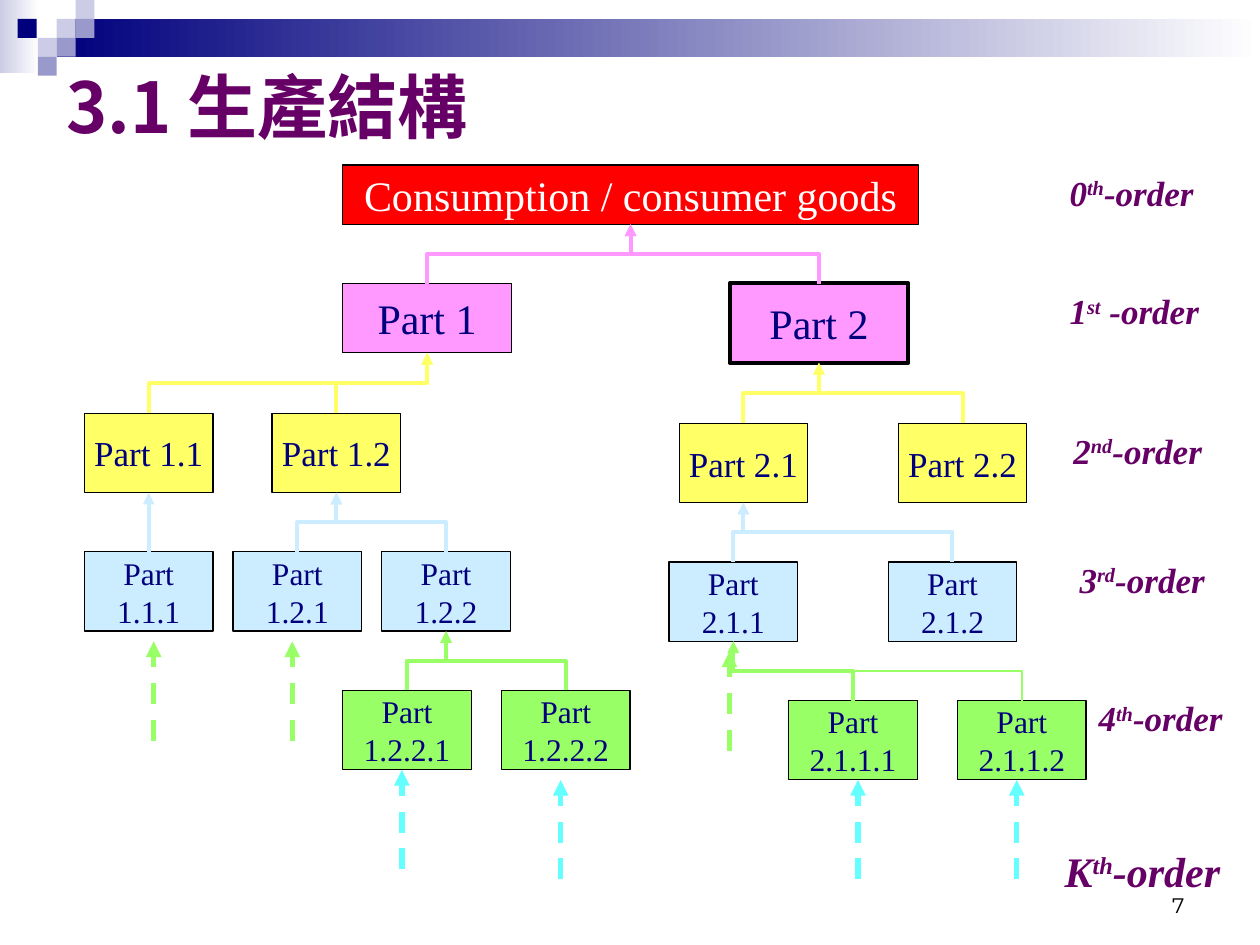
from dataclasses import dataclass

from lxml.etree import SubElement
from pptx import Presentation
from pptx.dml.color import RGBColor
from pptx.enum.dml import MSO_LINE
from pptx.enum.shapes import MSO_CONNECTOR, MSO_SHAPE
from pptx.enum.text import MSO_ANCHOR, MSO_AUTO_SIZE, PP_ALIGN
from pptx.oxml.ns import qn
from pptx.util import Inches, Pt


@dataclass(frozen=True)
class Theme:
    navy: str = "00007D"
    lavender: str = "CCCCE6"
    periwinkle: str = "9999CC"
    purple: str = "660066"
    white: str = "FFFFFF"
    black: str = "000000"
    cyan: str = "66FFFF"
    levels: tuple = ("FF0000", "FF99FF", "FFFF66", "CCECFF", "99FF66")
    level_sizes: tuple = (24, 24, 20, 18, 18)
    title_size: int = 40
    label_size: int = 20
    last_label_size: int = 24
    number_size: int = 12
    body_font: str = "Times New Roman"
    title_font: str = "Noto Sans CJK TC"
    number_font: str = "Montserrat"


T = Theme()
BOX_W, BOX_H = 1.02, 0.63

GOODS = "Consumption / consumer goods"
PARTS = {
    GOODS: (0, None, 2.72, 1.31, 4.57, 0.47),
    "Part 1": (1, GOODS, 2.72, 2.25, 1.34, 0.55),
    "Part 2": (1, GOODS, 5.79, 2.25, 1.42, BOX_H),
}
ROWS = [
    (2, 3.28, {"1.1": 0.67, "1.2": 2.16}),
    (2, 3.36, {"2.1": 5.39, "2.2": 7.13}),
    (3, 4.38, {"1.1.1": 0.67, "1.2.1": 1.85, "1.2.2": 3.03}),
    (3, 4.46, {"2.1.1": 5.31, "2.1.2": 7.05}),
    (4, 5.48, {"1.2.2.1": 2.72, "1.2.2.2": 3.98}),
    (4, 5.56, {"2.1.1.1": 6.26, "2.1.1.2": 7.6}),
]
for level, y, row in ROWS:
    for code, x in row.items():
        PARTS[f"Part {code}"] = (level, f"Part {code[:-2]}", x, y, BOX_W, BOX_H)

ORDERS = [
    ("0", "th", "-order", 8.39, 1.31, 1.61),
    ("1", "st", " -order", 8.39, 2.25, 1.38),
    ("2", "nd", "-order", 8.42, 3.36, 1.58),
    ("3", "rd", "-order", 8.47, 4.38, 1.26),
    ("4", "th", "-order", 8.62, 5.48, 1.38),
    ("K", "th", "-order", 8.35, 6.66, 1.65),
]
DASHED = [
    (T.levels[4], 5.09, (1.22, 2.32)),
    (T.levels[4], 5.17, (5.79,)),
    (T.cyan, 6.11, (3.19,)),
    (T.cyan, 6.19, (4.45, 6.81, 8.07)),
]
DASHED_LENGTH = 0.79
MOSAIC = [
    (0.45, 0.15, T.lavender), (0.6, 0, T.lavender), (0.6, 0.15, T.periwinkle),
    (0.3, 0.3, T.lavender), (0.14, 0.15, T.navy), (0.45, 0.3, T.periwinkle),
    (0.3, 0.45, T.periwinkle),
]


def rgb(color):
    return RGBColor.from_string(color)


def add_text(p, text, *, size, color, font=T.body_font, bold=False, italic=False, raised=False):
    r = p.add_run()
    r.text = text
    r.font.size = Pt(size)
    r.font.name = font
    r.font.bold = bold
    r.font.italic = italic
    r.font.color.rgb = rgb(color)
    rpr = r.font._element
    SubElement(rpr, qn("a:ea")).set("typeface", font)
    if raised:
        rpr.set("baseline", "30000")


def add_rect(s, x, y, w, h, fill, fade_to=None):
    sp = s.shapes.add_shape(MSO_SHAPE.RECTANGLE, Inches(x), Inches(y), Inches(w), Inches(h))
    sp.shadow.inherit = False
    sp.line.fill.background()
    if fade_to:
        sp.fill.gradient()
        sp.fill.gradient_angle = 0
        for stop, color in zip(sp.fill.gradient_stops, (fill, fade_to)):
            stop.color.rgb = rgb(color)
    else:
        sp.fill.solid()
        sp.fill.fore_color.rgb = rgb(fill)
    return sp


def add_banner(s):
    add_rect(s, 0, 0, 0.31, 0.58, T.lavender, T.white)
    add_rect(s, 0.45, 0.15, 9.55, 0.3, T.navy, T.white)
    for x, y, color in MOSAIC:
        add_rect(s, x, y, 0.15, 0.15, color)


def add_title(s, text):
    sp = s.shapes.title
    sp.left, sp.top, sp.width, sp.height = map(Inches, (0.43, 0.44, 8.9, 0.79))
    tf = sp.text_frame
    tf.auto_size = MSO_AUTO_SIZE.NONE
    tf.vertical_anchor = MSO_ANCHOR.MIDDLE
    p = tf.paragraphs[0]
    p.alignment = PP_ALIGN.LEFT
    add_text(p, text, size=T.title_size, color=T.purple, font=T.title_font, bold=True)


def add_part(s, name, level, x, y, w, h):
    sp = add_rect(s, x, y, w, h, T.levels[level])
    sp.line.color.rgb = rgb(T.black)
    sp.line.width = Pt(2.25 if name == "Part 2" else 0.75)
    tf = sp.text_frame
    tf.word_wrap = False
    tf.vertical_anchor = MSO_ANCHOR.MIDDLE
    for i, line in enumerate(name.split() if level > 2 else [name]):
        p = tf.add_paragraph() if i else tf.paragraphs[0]
        p.alignment = PP_ALIGN.CENTER
        add_text(p, line, size=T.level_sizes[level], color=T.navy if level else T.white)


def add_arrow(s, kind, x1, y1, x2, y2, color, width):
    cn = s.shapes.add_connector(kind, Inches(x1), Inches(y1), Inches(x2), Inches(y2))
    cn.line.color.rgb = rgb(color)
    cn.line.width = Pt(width)
    SubElement(cn.line._get_or_add_ln(), qn("a:tailEnd")).set("type", "triangle")
    SubElement(cn._element.spPr, qn("a:effectLst"))
    return cn


def add_elbow_up(s, x1, y1, x2, y2, color, width):
    w, h = y1 - y2, abs(x2 - x1)
    left, top = (x1 + x2 - w) / 2, (y1 + y2 - h) / 2
    cn = add_arrow(s, MSO_CONNECTOR.ELBOW, left, top, left + w, top + h, color, width)
    xfrm = cn._element.spPr.find(qn("a:xfrm"))
    leftward = x2 < x1
    xfrm.set("rot", str((90 if leftward else 270) * 60000))
    if leftward:
        xfrm.set("flipH", "1")


def add_link(s, name):
    level, parent, x, y, w, h = PARTS[name]
    px, py, pw, ph = PARTS[parent][2:]
    start, end = x + w / 2, px + pw / 2
    color, width = T.levels[level], 1.5 if name == "Part 2.1.1.2" else 2.25
    if abs(start - end) < 0.01:
        add_arrow(s, MSO_CONNECTOR.STRAIGHT, start, y, end, py + ph, color, width)
    else:
        add_elbow_up(s, start, y, end, py + ph, color, width)


def add_dashed_arrow(s, x, top, color):
    cn = add_arrow(s, MSO_CONNECTOR.STRAIGHT, x, top + DASHED_LENGTH, x, top, color, 3)
    cn.line.dash_style = MSO_LINE.DASH


def add_box(s, x, y, w, h):
    tf = s.shapes.add_textbox(Inches(x), Inches(y), Inches(w), Inches(h)).text_frame
    tf.word_wrap = True
    return tf


def add_order(s, order, suffix, rest, x, y, w):
    last = order == "K"
    p = add_box(s, x, y, w, 0.5 if last else 0.43).paragraphs[0]
    for text in (order, suffix, rest):
        add_text(p, text, size=T.last_label_size if last else T.label_size, color=T.purple,
                 bold=True, italic=True, raised=text == suffix)


def add_page_number(s, number):
    tf = add_box(s, 7.17, 6.83, 2.33, 0.5)
    tf.vertical_anchor = MSO_ANCHOR.BOTTOM
    tf.paragraphs[0].alignment = PP_ALIGN.RIGHT
    add_text(tf.paragraphs[0], number, size=T.number_size, color=T.black, font=T.number_font)


def main():
    prs = Presentation()
    prs.slide_width, prs.slide_height = Inches(10), Inches(7.5)
    s = prs.slides.add_slide(prs.slide_layouts[5])
    add_banner(s)
    add_page_number(s, "7")
    add_title(s, "3.1 生產結構")
    for name, (level, _, *place) in PARTS.items():
        add_part(s, name, level, *place)
    for name in PARTS:
        if name != GOODS:
            add_link(s, name)
    for color, top, xs in DASHED:
        for x in xs:
            add_dashed_arrow(s, x, top, color)
    for order in ORDERS:
        add_order(s, *order)
    prs.save("out.pptx")


if __name__ == "__main__":
    main()
